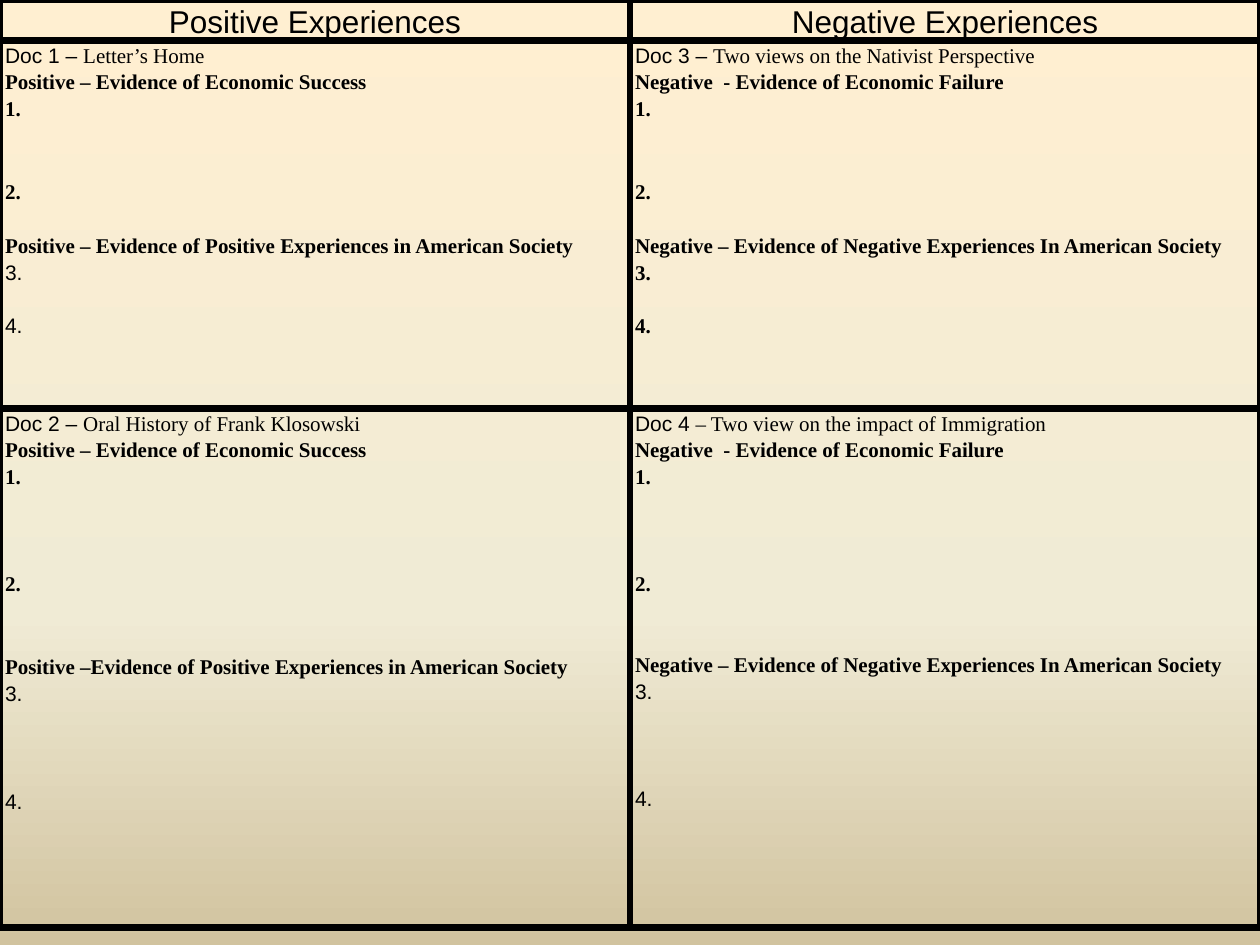
from copy import deepcopy

from pptx import Presentation, util as u
from pptx.dml.color import RGBColor
from pptx.enum import text
from pptx.oxml import ns, xmlchemy

BLACK = RGBColor(0x00, 0x00, 0x00)
CREAM = RGBColor(0xFF, 0xEF, 0xD1)
IVORY = RGBColor(0xF0, 0xEB, 0xD5)
SAND = RGBColor(0xD1, 0xC3, 0x9F)
SANS, SERIF = "Arial", "Times New Roman"
NUMBER_CONTENT = chr(160)


def add_text(paragraph, content, font=SERIF, size=12, bold=False):
    run = paragraph.add_run()
    run.text = content
    run.font.name = font
    run.font.size = u.Pt(size)
    run.font.bold = bold
    run.font.color.rgb = BLACK


def add_element(parent, tag, **attributes):
    element = xmlchemy.OxmlElement(tag)
    for name, value in attributes.items():
        element.set(name, str(value))
    parent.append(element)
    return element


class Worksheet:
    line_spacing = 1.15
    border_width = u.Pt(4.5)
    side_margin = u.Inches(0.04)
    number_indent = u.Inches(0.38)

    def __init__(self, presentation):
        self.width = presentation.slide_width
        self.slide = presentation.slides.add_slide(presentation.slide_layouts[6])

    def background(self, first, middle, last, middle_position):
        fill = self.slide.background.fill
        fill.gradient()
        fill.gradient_angle = 270
        for stop, color, position in zip(fill.gradient_stops, (first, last), (0, 1)):
            stop.color.rgb = color
            stop.position = position
        stop_list = next(self.slide.element.iter(ns.qn("a:gsLst")))
        stop_list.insert(1, deepcopy(stop_list[0]))
        middle_stop = fill.gradient_stops[1]
        middle_stop.color.rgb = middle
        middle_stop.position = middle_position

    def table(self, row_heights, column_count):
        frame = self.slide.shapes.add_table(
            len(row_heights), column_count, 0, 0, self.width, u.Inches(sum(row_heights)))
        table = frame.table
        table.first_row = table.horz_banding = False
        for row, height in zip(table.rows, row_heights):
            row.height = u.Inches(height)
        for cell in table.iter_cells():
            self.format_cell(cell)
        return table

    def format_cell(self, cell):
        cell.margin_left = cell.margin_right = self.side_margin
        cell.margin_top = cell.margin_bottom = 0
        properties = cell._tc.get_or_add_tcPr()
        for side in "LRTB":
            line = add_element(properties, f"a:ln{side}", w=self.border_width)
            fill = add_element(line, "a:solidFill")
            add_element(fill, "a:srgbClr", val=BLACK)
        cell.fill.background()

    def paragraph(self, cell, gap=0):
        paragraph = cell.text_frame.paragraphs[0]
        if paragraph.runs:
            paragraph = cell.text_frame.add_paragraph()
        paragraph.line_spacing = self.line_spacing
        if gap:
            paragraph.space_before = u.Pt(gap)
        return paragraph

    def heading(self, cell, content):
        paragraph = self.paragraph(cell)
        paragraph.alignment = text.PP_ALIGN.CENTER
        add_text(paragraph, content, font=SANS, size=18)

    def number(self, cell, value, gap, **style):
        paragraph = self.paragraph(cell, gap)
        properties = paragraph._p.get_or_add_pPr()
        properties.set("marL", str(self.number_indent))
        properties.set("indent", str(-self.number_indent))
        add_element(properties, "a:buAutoNum", type="arabicPeriod", startAt=value)
        add_text(paragraph, NUMBER_CONTENT, **style)

    def document(self, cell, label, title, economic, social, gaps, social_style):
        second_gap, social_gap, fourth_gap = gaps
        strong = {"font": SERIF, "bold": True}
        paragraph = self.paragraph(cell)
        add_text(paragraph, label, font=SANS)
        add_text(paragraph, title)
        add_text(self.paragraph(cell), economic, **strong)
        self.number(cell, 1, 0, **strong)
        self.number(cell, 2, second_gap, **strong)
        add_text(self.paragraph(cell, social_gap), social, **strong)
        self.number(cell, 3, 0, **social_style)
        self.number(cell, 4, fourth_gap, **social_style)


def main():
    presentation = Presentation()
    presentation.slide_width = u.Inches(10)
    presentation.slide_height = u.Inches(7.5)
    worksheet = Worksheet(presentation)
    worksheet.background(CREAM, IVORY, SAND, 0.65)
    table = worksheet.table((0.29, 2.92, 4.12), 2)

    for column, kind in enumerate(("Positive", "Negative")):
        worksheet.heading(table.cell(0, column), f"{kind} Experiences")

    success = "Positive – Evidence of Economic Success"
    failure = "Negative  - Evidence of Economic Failure"
    negative_society = "Negative – Evidence of Negative Experiences In American Society"
    plain = {"font": SANS}
    strong = {"font": SERIF, "bold": True}
    documents = {
        (1, 0): ("Doc 1 – ", "Letter’s Home", success,
                 "Positive – Evidence of Positive Experiences in American Society",
                 (32, 15.5, 15), plain),
        (1, 1): ("Doc 3 – ", "Two views on the Nativist Perspective", failure,
                 negative_society, (32, 15.5, 15), strong),
        (2, 0): ("Doc 2 – ", "Oral History of Frank Klosowski", success,
                 "Positive –Evidence of Positive Experiences in American Society",
                 (46, 32, 46), plain),
        (2, 1): ("Doc 4 ", "– Two view on the impact of Immigration", failure,
                 negative_society, (46, 30.5, 46), plain),
    }
    for position, content in documents.items():
        worksheet.document(table.cell(*position), *content)

    presentation.save("out.pptx")


if __name__ == "__main__":
    main()
